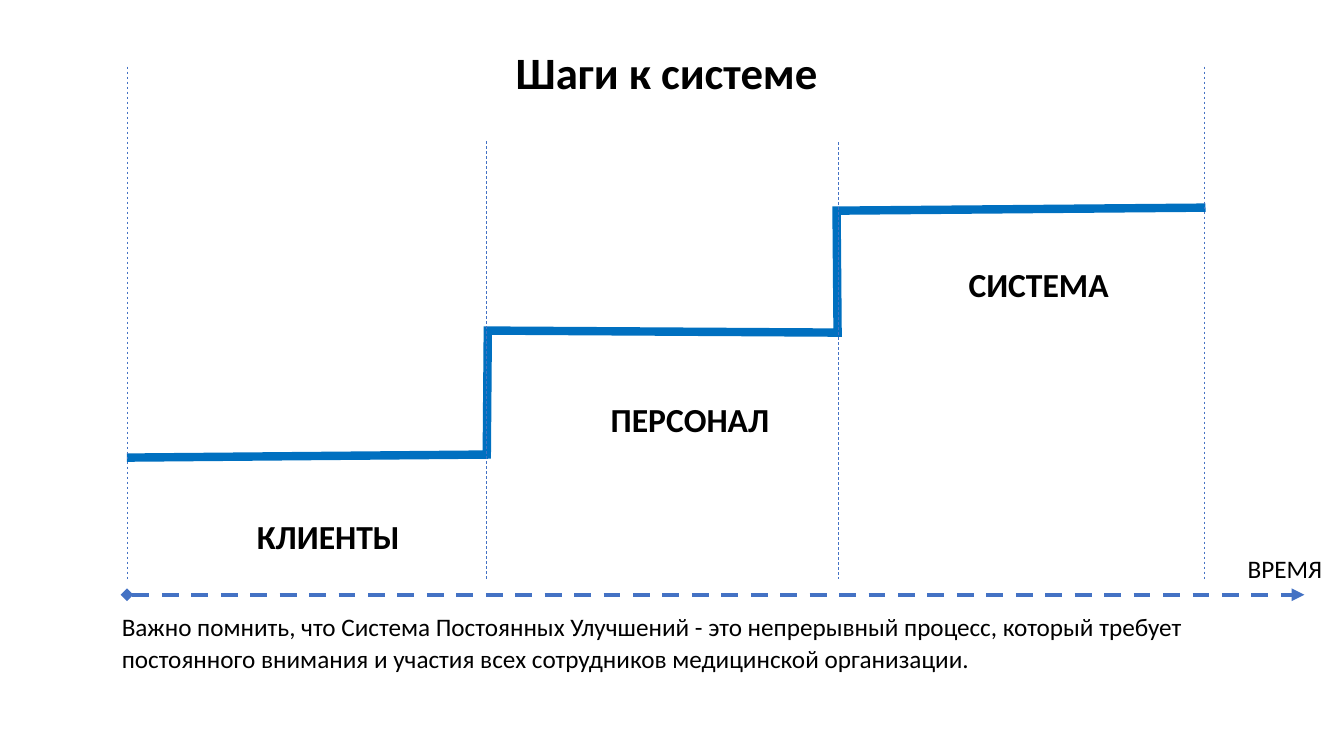
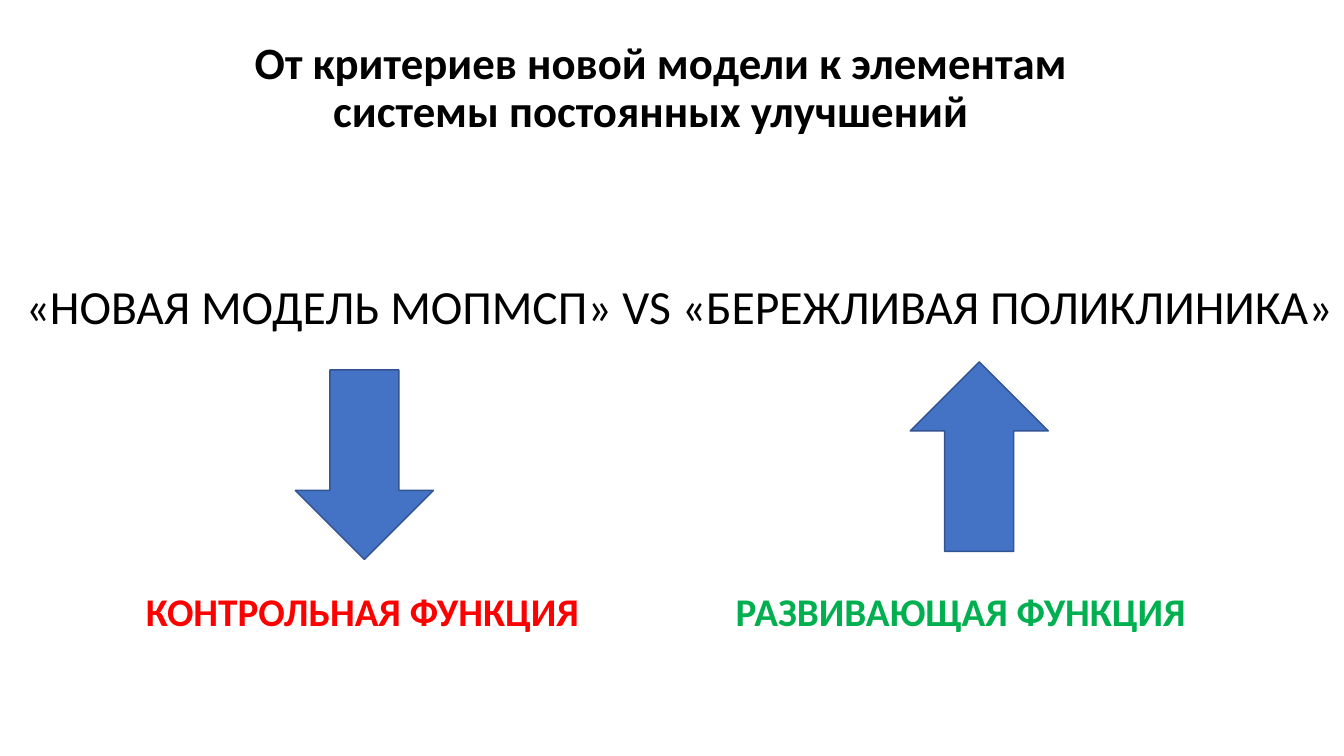
from dataclasses import dataclass

from lxml import etree
from pptx import Presentation
from pptx import util as u
from pptx.dml.color import RGBColor
from pptx.enum import dml, shapes, text
from pptx.oxml import ns
from pptx.util import Inches

FONT = "Calibri"
COLORS = {
    "text": "000000",
    "accent": "4472C4",
    "outline": "325491",
    "step": "0070C0",
    "control": "FF0000",
    "growth": "00B050",
}


@dataclass
class Label:
    text: str
    left: float
    top: float
    width: float
    height: float
    size: int
    bold: bool = False
    color: str = "text"
    wrap: bool = False
    align: text.PP_ALIGN = text.PP_ALIGN.LEFT
    spacing: float = 1.0


@dataclass
class Divider:
    x: float
    top: float


@dataclass
class Arrow:
    kind: shapes.MSO_SHAPE
    left: float
    top: float


STEPS = [(1.26, 4.54), (4.83, 4.51), (4.84, 3.28), (8.31, 3.3), (8.3, 2.09), (11.96, 2.06)]
DIVIDER_BOTTOM = 5.74
AXIS_Y = 5.9
DIVIDERS = [
    Divider(1.26, 0.66),
    Divider(4.83, 1.4),
    Divider(8.32, 1.41),
    Divider(11.95, 0.66),
]
STEP_LABELS = [
    Label("Важно помнить, что Система Постоянных Улучшений - это непрерывный процесс, "
          "который требует постоянного внимания и участия всех сотрудников медицинской "
          "организации.", 1.11, 5.99, 11.5, 0.73, 18, wrap=True, spacing=1.07),
    Label("КЛИЕНТЫ", 2.45, 5.07, 1.63, 0.5, 24, True),
    Label("ПЕРСОНАЛ", 5.96, 3.91, 1.79, 0.5, 24, True),
    Label("СИСТЕМА", 9.51, 2.57, 1.61, 0.5, 24, True),
    Label("ВРЕМЯ", 12.28, 5.44, 0.95, 0.4, 18),
]
ARROWS = [
    Arrow(shapes.MSO_SHAPE.DOWN_ARROW, 2.93, 3.67),
    Arrow(shapes.MSO_SHAPE.UP_ARROW, 9.03, 3.59),
]
MODEL_LABELS = [
    Label("«НОВАЯ МОДЕЛЬ МОПМСП» VS «БЕРЕЖЛИВАЯ ПОЛИКЛИНИКА»", 0.15, 2.76, 13.18, 0.62, 34,
          align=text.PP_ALIGN.CENTER, spacing=0.9),
    Label("КОНТРОЛЬНАЯ ФУНКЦИЯ", 1.35, 5.78, 4.54, 0.57, 28, True, "control"),
    Label("РАЗВИВАЮЩАЯ ФУНКЦИЯ", 7.2, 5.78, 4.72, 0.57, 28, True, "growth"),
]


def rgb(name: str) -> RGBColor:
    return RGBColor.from_string(COLORS[name])


def write(sp, label: Label) -> None:
    sp.left, sp.top = Inches(label.left), Inches(label.top)
    sp.width, sp.height = Inches(label.width), Inches(label.height)
    tf = sp.text_frame
    tf.word_wrap = label.wrap
    tf.auto_size = text.MSO_AUTO_SIZE.NONE
    p = tf.paragraphs[0]
    p.text = label.text
    p.alignment = label.align
    p.line_spacing = label.spacing
    p.space_before = u.Pt(0)
    p.font.name = FONT
    p.font.size = u.Pt(label.size)
    p.font.bold = label.bold
    p.font.color.rgb = rgb(label.color)


def add_label(s, label: Label) -> None:
    write(s.shapes.add_textbox(0, 0, 0, 0), label)


def add_titled_slide(prs, title: str, left: float, top: float, width: float, height: float,
                     anchor: text.MSO_ANCHOR):
    s = prs.slides.add_slide(prs.slide_layouts.get_by_name("Title Only"))
    write(s.shapes.title, Label(title, left, top, width, height, 32, True, wrap=True,
                                align=text.PP_ALIGN.CENTER, spacing=0.9))
    s.shapes.title.text_frame.vertical_anchor = anchor
    return s


def add_dashed_line(s, x1: float, y1: float, x2: float, y2: float, width: float):
    line = s.shapes.add_connector(shapes.MSO_CONNECTOR.STRAIGHT,
                                  Inches(x1), Inches(y1), Inches(x2), Inches(y2))
    line.line.color.rgb = rgb("accent")
    line.line.width = u.Pt(width)
    line.line.dash_style = dml.MSO_LINE.DASH
    etree.SubElement(line._element.spPr, ns.qn("a:effectLst"))
    return line


def add_staircase(s) -> None:
    start, *rest = [(Inches(x), Inches(y)) for x, y in STEPS]
    builder = s.shapes.build_freeform(*start)
    builder.add_line_segments(rest, close=False)
    sp = builder.convert_to_shape()
    sp.shadow.inherit = False
    sp.fill.background()
    sp.line.color.rgb = rgb("step")
    sp.line.width = u.Pt(6)
    etree.SubElement(sp.line._get_or_add_ln(), ns.qn("a:miter"), lim="800000")


def add_time_axis(s) -> None:
    axis = add_dashed_line(s, DIVIDERS[0].x, AXIS_Y, 12.94, AXIS_Y, 3)
    ln = axis.line._get_or_add_ln()
    for tag, kind in (("a:headEnd", "diamond"), ("a:tailEnd", "triangle")):
        etree.SubElement(ln, ns.qn(tag), type=kind)


def add_arrow(s, arrow: Arrow) -> None:
    sp = s.shapes.add_shape(arrow.kind, Inches(arrow.left), Inches(arrow.top),
                            Inches(1.37), Inches(1.88))
    sp.shadow.inherit = False
    sp.fill.solid()
    sp.fill.fore_color.rgb = rgb("accent")
    sp.line.color.rgb = rgb("outline")
    sp.line.width = u.Pt(1)


def build_steps(prs) -> None:
    s = add_titled_slide(prs, "Шаги к системе", 0.95, 0, 11.33, 1.03, text.MSO_ANCHOR.BOTTOM)
    add_staircase(s)
    for d in DIVIDERS:
        add_dashed_line(s, d.x, d.top, d.x, DIVIDER_BOTTOM, 0.5)
    add_time_axis(s)
    for label in STEP_LABELS:
        add_label(s, label)


def build_models(prs) -> None:
    s = add_titled_slide(prs, "От критериев новой модели к элементам системы постоянных улучшений  ",
                         1.56, 0.35, 10, 1.81, text.MSO_ANCHOR.TOP)
    for arrow in ARROWS:
        add_arrow(s, arrow)
    for label in MODEL_LABELS:
        add_label(s, label)


def main() -> None:
    prs = Presentation()
    prs.slide_width, prs.slide_height = Inches(40 / 3), Inches(7.5)
    build_steps(prs)
    build_models(prs)
    prs.save("out.pptx")


if __name__ == "__main__":
    main()
